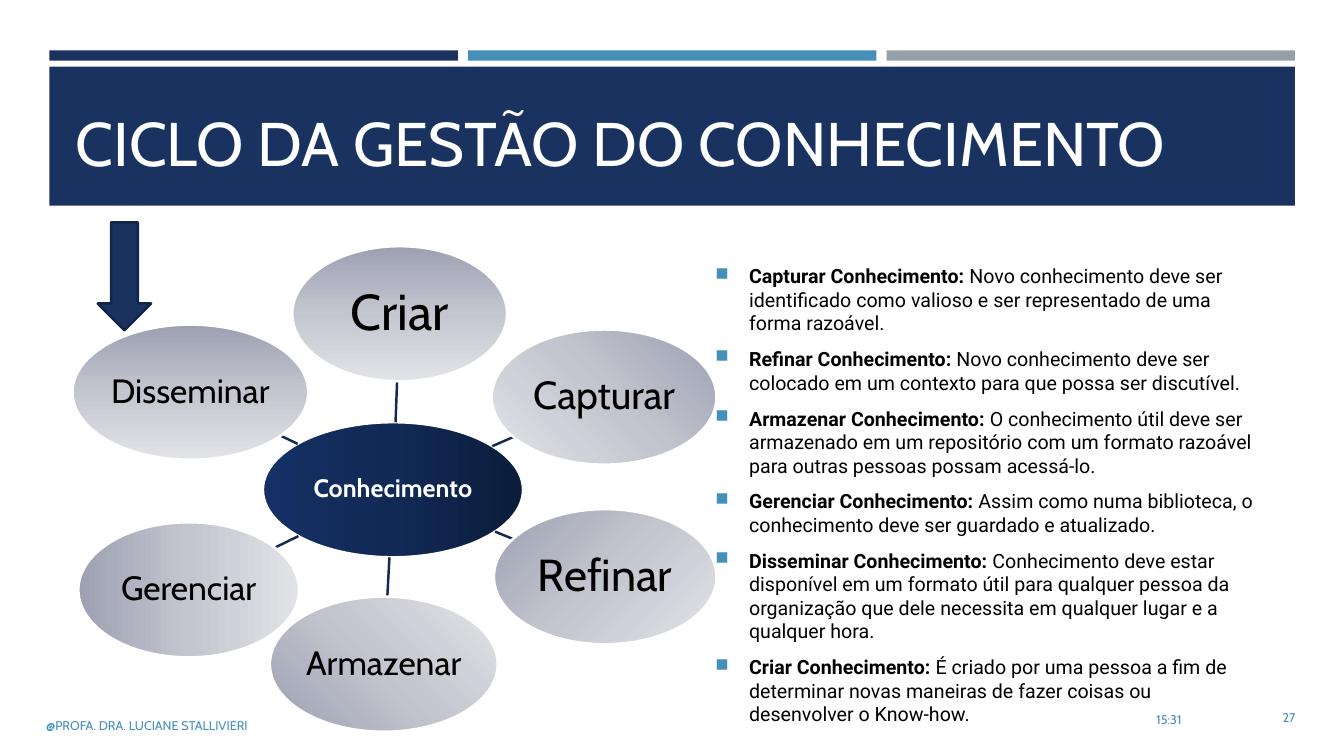
from dataclasses import dataclass
from math import hypot

from lxml import etree
from pptx import Presentation
from pptx.dml.color import RGBColor as RGB
from pptx.enum.shapes import MSO_CONNECTOR as CONN, MSO_SHAPE as SHAPE
from pptx.enum.text import MSO_ANCHOR as ANCHOR, PP_ALIGN as ALIGN
from pptx.oxml import parse_xml
from pptx.oxml.ns import nsdecls, qn
from pptx.util import Pt


@dataclass(frozen=True)
class Theme:
    navy: str = "1A3260"
    blue: str = "4590B8"
    grey: str = "969FA7"
    white: str = "FFFFFF"
    black: str = "000000"
    spoke: str = "15284D"
    arrow_edge: str = "132547"
    hub_stops: tuple = ("0C1D3C", "112955", "153065")
    node_stops: tuple = ("9CA0B1", "C4C6CF", "E2E3E7")
    head_font: str = "Cabin"
    body_font: str = "Roboto"
    title_size: float = 44
    hub_size: float = 18
    body_size: float = 14
    footer_size: float = 9
    line: float = 1.75


T = Theme()

# Name, left, top, width, type size, gradient (angle, or focus corner l-t-r-b)
HUB = ("Conhecimento", 136, 125.7, 185.8, T.hub_size, 180)
NODES = [
    ("Criar", 157, 0, 153.4, 36, 90),
    ("Capturar", 299.5, 59.5, 160.5, 28, 135),
    ("Refinar", 301, 187.8, 159, 32, (0, 0, 100, 100)),
    ("Armazenar", 141, 250.3, 162.7, 24, (0, 100, 100, 0)),
    ("Gerenciar", 4.2, 197.2, 157.6, 24, 0),
    ("Disseminar", 0, 56, 168.4, 24, 90),
]
NODE_H = 96.5

STEPS = [
    ("Capturar", "Novo conhecimento deve ser identificado como valioso e ser "
     "representado de uma forma razoável."),
    ("Refinar", "Novo conhecimento deve ser colocado em um contexto para que "
     "possa ser discutível."),
    ("Armazenar", "O conhecimento útil deve ser armazenado em um repositório com um "
     "formato razoável para outras pessoas possam acessá-lo."),
    ("Gerenciar", "Assim como numa biblioteca, o conhecimento deve ser guardado e "
     "atualizado."),
    ("Disseminar", "Conhecimento deve estar disponível em um formato útil para "
     "qualquer pessoa da organização que dele necessita em qualquer lugar e a "
     "qualquer hora."),
    ("Criar", "É criado por uma pessoa a fim de determinar novas maneiras de fazer "
     "coisas ou desenvolver o Know-how."),
]


def set_attrs(obj, **values):
    for name, value in values.items():
        setattr(obj, name, value)


def add_run(p, text, size, color, font=T.head_font, bold=False):
    r = p.add_run()
    r.text = text
    set_attrs(r.font, name=font, size=Pt(size), bold=bold)
    r.font.color.rgb = RGB.from_string(color)


def add_text(s, box, anchor=ANCHOR.MIDDLE):
    tf = s.shapes.add_textbox(*map(Pt, box)).text_frame
    set_attrs(tf, word_wrap=True, vertical_anchor=anchor)
    return tf


def add_shape(s, kind, box, fill=None, line=None):
    sp = s.shapes.add_shape(kind, *map(Pt, box))
    sp.shadow.inherit = False
    if fill:
        sp.fill.solid()
        sp.fill.fore_color.rgb = RGB.from_string(fill)
    if line:
        sp.line.color.rgb = RGB.from_string(line)
        sp.line.width = Pt(T.line)
    else:
        sp.line.fill.background()
    return sp


def set_gradient(sp, stops, direction):
    sp.fill.gradient()
    grad = sp.fill._xPr.find(qn("a:gradFill"))
    gs = "".join(f'<a:gs pos="{i * 50000}"><a:srgbClr val="{c}"/></a:gs>'
                 for i, c in enumerate(stops))
    if isinstance(direction, tuple):
        edges = " ".join(f'{e}="{v * 1000}"' for e, v in zip("ltrb", direction))
        shade = f'<a:path path="circle"><a:fillToRect {edges}/></a:path>'
    else:
        shade = f'<a:lin ang="{direction * 60000}" scaled="0"/>'
    grad.getparent().replace(grad, parse_xml(
        f'<a:gradFill {nsdecls("a")} rotWithShape="1"><a:gsLst>{gs}</a:gsLst>'
        f'{shade}</a:gradFill>'))


def add_header(s, x, y, w, h):
    # Three strips above the title band
    gap, strip_h, band_top = 7.2, 7.4, 11.6
    strip_w = (w - 2 * gap) / 3
    for i, color in enumerate((T.navy, T.blue, T.grey)):
        add_shape(s, SHAPE.RECTANGLE, (x + i * (strip_w + gap), y, strip_w, strip_h), color)
    add_shape(s, SHAPE.RECTANGLE, (x, y + band_top, w, h - band_top), T.navy)
    tf = add_text(s, (x + 11.5, y + 17.3, w - 21.5, 77.8), ANCHOR.BOTTOM)
    add_run(tf.paragraphs[0], "CICLO DA GESTÃO DO CONHECIMENTO", T.title_size, T.white)


def add_bubble(s, x, y, bubble, stops, color, bold=False):
    name, left, top, width, size, direction = bubble
    sp = add_shape(s, SHAPE.OVAL, (x + left, y + top, width, NODE_H), line=T.white)
    set_gradient(sp, stops, direction)
    tf = sp.text_frame
    set_attrs(tf, word_wrap=False, vertical_anchor=ANCHOR.MIDDLE,
              margin_left=0, margin_right=0, margin_top=0, margin_bottom=0)
    p = tf.paragraphs[0]
    set_attrs(p, alignment=ALIGN.CENTER, line_spacing=0.9)
    add_run(p, name, size, color, bold=bold)


def add_spoke(s, x, y, node):
    # Runs along the line of centres, from one ellipse edge to the other
    (hx, hy), (nx, ny) = [(b[1] + b[3] / 2, b[2] + NODE_H / 2) for b in (HUB, node)]
    dx, dy = nx - hx, ny - hy
    start, end = [1 / hypot(dx / (b[3] / 2), dy / (NODE_H / 2)) for b in (HUB, node)]
    ends = [x + hx + dx * start, y + hy + dy * start, x + nx - dx * end, y + ny - dy * end]
    c = s.shapes.add_connector(CONN.STRAIGHT, *map(Pt, ends))
    c.line.color.rgb = RGB.from_string(T.spoke)
    c.line.width = Pt(T.line)
    etree.SubElement(c._element.spPr, qn("a:effectLst"))


def add_cycle(s, x, y):
    add_bubble(s, x, y, HUB, T.hub_stops, T.white, bold=True)
    for node in NODES:
        add_spoke(s, x, y, node)
        add_bubble(s, x, y, node, T.node_stops, T.black)
    # Arrow pointing at the last step
    add_shape(s, SHAPE.DOWN_ARROW, (x + 18, y - 17, 38.2, 77), T.navy, T.arrow_edge)


def add_steps(s, *box):
    tf = add_text(s, box)
    for i, (name, detail) in enumerate(STEPS):
        p = tf.add_paragraph() if i else tf.paragraphs[0]
        set_attrs(p, space_before=Pt(2.8), space_after=Pt(6))
        pPr = p._p.get_or_add_pPr()
        pPr.set("marL", str(Pt(24)))
        pPr.set("indent", str(-Pt(24)))
        for tag in (f'buClr {nsdecls("a")}><a:srgbClr val="{T.blue}"/></a:buClr',
                    f'buSzPct {nsdecls("a")} val="92000"/',
                    f'buChar {nsdecls("a")} char="■"/'):
            pPr.append(parse_xml(f"<a:{tag}>"))
        add_run(p, f"{name} Conhecimento:", T.body_size, T.black, T.body_font, True)
        add_run(p, f" {detail}", T.body_size, T.black, T.body_font)


def add_footer(s, x, y):
    for text, left, top, width, align in (
            ("@PROFA. DRA. LUCIANE STALLIVIERI", 0, 5.8, 544.3, ALIGN.LEFT),
            ("15:31", 601.2, 1.4, 224, ALIGN.RIGHT),
            ("27", 823.7, 0, 82.8, ALIGN.RIGHT)):
        p = add_text(s, (x + left, y + top, width, 28.8)).paragraphs[0]
        p.alignment = align
        add_run(p, text, T.footer_size, T.blue)


def main():
    prs = Presentation()
    set_attrs(prs, slide_width=Pt(960), slide_height=Pt(540))
    s = prs.slides.add_slide(prs.slide_layouts[6])
    add_header(s, 35.3, 36, 889.7, 110.9)
    add_cycle(s, 51.8, 175.9)
    add_steps(s, 504, 182.2, 404, 342.7)
    add_footer(s, 25.9, 498.2)
    prs.save("out.pptx")


if __name__ == "__main__":
    main()
